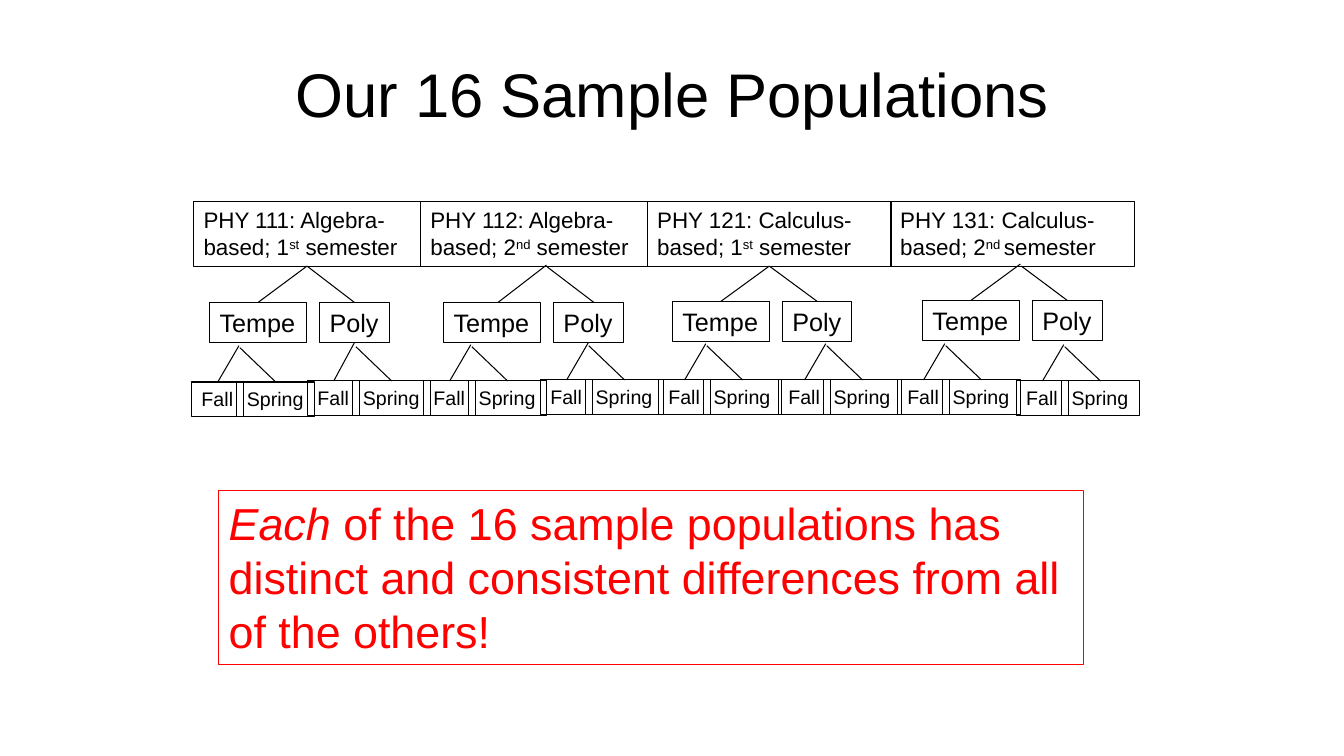
from dataclasses import dataclass

import pptx
import pptx.dml.color
import pptx.enum.shapes
import pptx.enum.text
import pptx.oxml.ns
import pptx.presentation
import pptx.shapes.autoshape
import pptx.shapes.connector
import pptx.slide
import pptx.text.text
import pptx.util
from lxml import etree

Inches = pptx.util.Inches
Box = pptx.shapes.autoshape.Shape
Point = tuple[float, float]


@dataclass(frozen=True)
class Theme:
    font: str = "Arial"
    ink: str = "000000"
    accent: str = "FF0000"
    title_size: int = 44
    course_size: int = 16
    campus_size: int = 18
    term_size: int = 14
    conclusion_size: int = 32
    line_width: float = 0.75


@dataclass(frozen=True)
class Piece:
    """A stretch of text with one format."""
    text: str
    italic: bool = False
    superscript: bool = False


@dataclass(frozen=True)
class Frame:
    left: float
    top: float
    width: float
    height: float


@dataclass(frozen=True)
class Child:
    """A labelled box, and the offset from the fork's apex to its line's end."""
    label: str
    shift: float
    width: float
    line_dx: float


@dataclass(frozen=True)
class Level:
    children: tuple[Child, Child]
    height: float
    size: int


@dataclass(frozen=True)
class Fork:
    """Left edge and top of a pair of boxes, and the apex of the lines to it."""
    left: float
    top: float
    apex: Point


@dataclass(frozen=True)
class Course:
    pieces: tuple[Piece, ...]
    frame: Frame
    campuses: Fork
    term_corners: tuple[Point, Point]


THEME = Theme()
JOIN_TOLERANCE = 0.025
SECOND_LINE_START: Point = (0.01, 0.02)
TERM_APEX: Point = (0.47, -0.36)

CAMPUSES = Level((Child("Tempe", 0, 0.96, -0.48), Child("Poly", 1.09, 0.69, 0.47)),
                 0.4, THEME.campus_size)
TERMS = Level((Child("Fall", 0, 0.52, -0.21), Child("Spring", 0.45, 0.77, 0.35)),
              0.34, THEME.term_size)


def course_name(start: str, ordinal: str, end: str = " semester") -> tuple[Piece, ...]:
    return Piece(start), Piece(ordinal, superscript=True), Piece(end)


COURSES = (
    Course(course_name("PHY 111: Algebra-based; 1", "st"), Frame(1.92, 2, 2.25, 0.64),
           Fork(2.08, 3, (3.04, 2.64)), ((1.9, 3.79), (3.05, 3.78))),
    Course(course_name("PHY 112: Algebra-based; 2", "nd"), Frame(4.17, 2, 2.25, 0.64),
           Fork(4.4, 3, (5.42, 2.63)), ((4.2, 3.78), (5.36, 3.77))),
    Course(course_name("PHY 121: Calculus-based; 1", "st"), Frame(6.42, 2, 2.42, 0.64),
           Fork(6.67, 2.99, (7.63, 2.64)), ((6.53, 3.77), (7.72, 3.77))),
    Course(course_name("PHY 131: Calculus-based; 2", "nd ", "semester"),
           Frame(8.83, 2, 2.42, 0.64),
           Fork(9.15, 2.98, (10.12, 2.62)), ((8.9, 3.77), (10.08, 3.78))),
)
CONCLUSION = (
    Piece("Each", italic=True),
    Piece(" of the 16 sample populations has distinct and consistent "
          "differences from all of the others!"),
)


def apply_format(target: object, values: dict[str, object]) -> None:
    for name, value in values.items():
        setattr(target, name, value)


def write(paragraph: pptx.text.text._Paragraph, pieces: tuple[Piece, ...],
          size: int, color: str) -> None:
    for piece in pieces:
        run = paragraph.add_run()
        run.text = piece.text
        apply_format(run.font, {"name": THEME.font, "size": pptx.util.Pt(size),
                                "italic": piece.italic})
        run.font.color.rgb = pptx.dml.color.RGBColor.from_string(color)
        if piece.superscript:
            run._r.get_or_add_rPr().set("baseline", "30000")


def style_line(shape: Box | pptx.shapes.connector.Connector, color: str) -> None:
    shape.line.color.rgb = pptx.dml.color.RGBColor.from_string(color)
    shape.line.width = pptx.util.Pt(THEME.line_width)


def add_box(slide: pptx.slide.Slide, frame: Frame, pieces: tuple[Piece, ...],
            size: int, color: str = THEME.ink, wrap: bool = True) -> Box:
    box = slide.shapes.add_shape(
        pptx.enum.shapes.MSO_SHAPE.RECTANGLE, Inches(frame.left), Inches(frame.top),
        Inches(frame.width), Inches(frame.height))
    box.shadow.inherit = False
    box.fill.background()
    style_line(box, color)
    apply_format(box.text_frame, {
        "word_wrap": wrap,
        "auto_size": pptx.enum.text.MSO_AUTO_SIZE.SHAPE_TO_FIT_TEXT,
        "vertical_anchor": pptx.enum.text.MSO_ANCHOR.TOP,
    })
    paragraph = box.text_frame.paragraphs[0]
    paragraph.alignment = pptx.enum.text.PP_ALIGN.LEFT
    write(paragraph, pieces, size, color)
    return box


def meets(point: Point, box: Box, y: int) -> bool:
    """Tell whether a point lies at the middle of a box's side at height y."""
    middle = box.left + box.width // 2
    return max(abs(Inches(point[0]) - middle),
               abs(Inches(point[1]) - y)) <= Inches(JOIN_TOLERANCE)


def add_branch(slide: pptx.slide.Slide, parent: Box, child: Box,
               start: Point, end: Point) -> None:
    branch = slide.shapes.add_connector(
        pptx.enum.shapes.MSO_CONNECTOR.STRAIGHT, *map(Inches, (*start, *end)))
    style_line(branch, THEME.ink)
    etree.SubElement(branch._element.spPr, pptx.oxml.ns.qn("a:effectLst"))
    if meets(start, parent, parent.top + parent.height):
        branch.begin_connect(parent, 2)
    if meets(end, child, child.top):
        branch.end_connect(child, 0)


def add_fork(slide: pptx.slide.Slide, parent: Box, fork: Fork, level: Level) -> list[Box]:
    """Draw a pair of boxes with the two lines that lead to it."""
    boxes = []
    apex_x, apex_y = fork.apex
    starts = (fork.apex, (apex_x + SECOND_LINE_START[0], apex_y + SECOND_LINE_START[1]))
    for child, start in zip(level.children, starts):
        frame = Frame(fork.left + child.shift, fork.top, child.width, level.height)
        box = add_box(slide, frame, (Piece(child.label),), level.size, wrap=False)
        add_branch(slide, parent, box, start, (apex_x + child.line_dx, fork.top))
        boxes.append(box)
    return boxes


def add_course(slide: pptx.slide.Slide, course: Course) -> None:
    header = add_box(slide, course.frame, course.pieces, THEME.course_size)
    campuses = add_fork(slide, header, course.campuses, CAMPUSES)
    for campus, (left, top) in zip(campuses, course.term_corners):
        apex = (left + TERM_APEX[0], top + TERM_APEX[1])
        add_fork(slide, campus, Fork(left, top, apex), TERMS)


def add_title(slide: pptx.slide.Slide, text: str) -> None:
    title = slide.shapes.title
    apply_format(title, {"left": Inches(0.67), "top": Inches(0.3),
                         "width": Inches(12), "height": Inches(1.25)})
    title.text_frame.vertical_anchor = pptx.enum.text.MSO_ANCHOR.MIDDLE
    paragraph = title.text_frame.paragraphs[0]
    paragraph.alignment = pptx.enum.text.PP_ALIGN.CENTER
    write(paragraph, (Piece(text),), THEME.title_size, THEME.ink)


def main() -> None:
    deck = pptx.Presentation()
    apply_format(deck, {"slide_width": Inches(13.33), "slide_height": Inches(7.5)})
    slide = deck.slides.add_slide(deck.slide_layouts.get_by_name("Title Only"))
    add_title(slide, "Our 16 Sample Populations")
    for course in COURSES:
        add_course(slide, course)
    add_box(slide, Frame(2.17, 4.87, 8.58, 1.72), CONCLUSION,
            THEME.conclusion_size, THEME.accent)
    deck.save("out.pptx")


if __name__ == "__main__":
    main()
